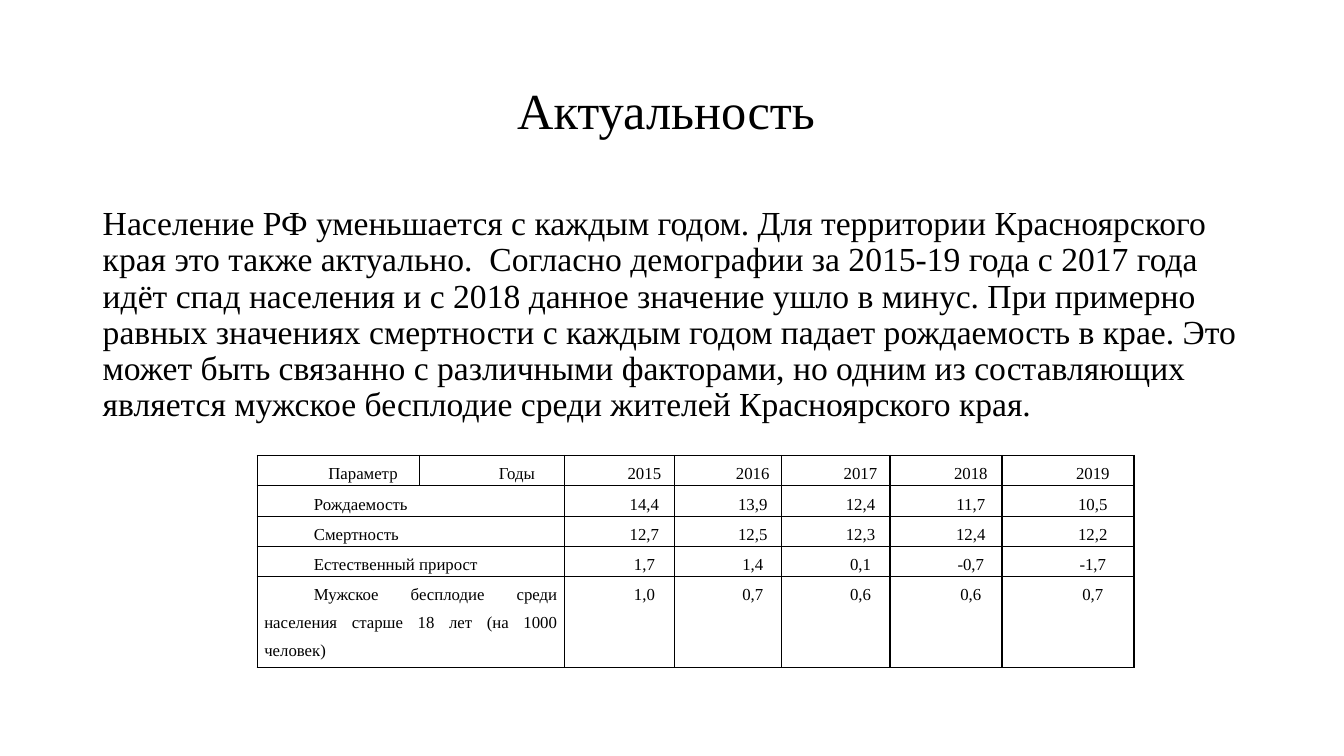
from dataclasses import dataclass

from lxml import etree
from pptx import Presentation
from pptx.dml.color import RGBColor
from pptx.enum.text import MSO_ANCHOR, PP_ALIGN
from pptx.oxml.ns import qn
from pptx.util import Cm, Pt

LEFT, CENTER, JUSTIFY = PP_ALIGN.LEFT, PP_ALIGN.CENTER, PP_ALIGN.JUSTIFY
TOP, MIDDLE = MSO_ANCHOR.TOP, MSO_ANCHOR.MIDDLE


@dataclass(frozen=True)
class Theme:
    font: str = "Times New Roman"
    ink: str = "000000"
    title_size: int = 36
    body_size: int = 24
    table_size: int = 12
    border_width: int = 1


THEME = Theme()

TITLE = "Актуальность "
BODY = (
    "Население РФ уменьшается с каждым годом. Для территории Красноярского края "
    "это также актуально.  Согласно демографии за 2015-19 года с 2017 года идёт "
    "спад населения и с 2018 данное значение ушло в минус. При примерно равных "
    "значениях смертности с каждым годом падает рождаемость в крае. Это может быть "
    "связанно с различными факторами, но одним из составляющих является мужское "
    "бесплодие среди жителей Красноярского края."
)

COLUMN_WIDTHS = [4.09, 3.66, 2.77, 2.69, 2.74, 2.82, 3.33]
ROW_HEIGHTS = [0.7, 0.7, 0.7, 0.7, 2.1]
HEADER = ["Параметр", "Годы", "2015", "2016", "2017", "2018", "2019"]
INDICATORS = [
    ("Рождаемость ", ["14,4", "13,9", "12,4", "11,7", "10,5"]),
    ("Смертность ", ["12,7", "12,5", "12,3", "12,4", "12,2"]),
    ("Естественный прирост", ["1,7", "1,4", "0,1", "-0,7", "-1,7"]),
    ("Мужское бесплодие среди населения старше 18 лет (на 1000 человек)",
     ["1,0", "0,7", "0,6", "0,6", "0,7"]),
]


def write_text(frame, text, *, size, align=LEFT, line_spacing=0.9,
               space_before=0, first_indent=0):
    para = frame.paragraphs[0]
    para.alignment = align
    para.line_spacing = line_spacing
    para.space_before = Pt(space_before)
    if first_indent:
        properties = para._p.get_or_add_pPr()
        properties.set("marL", "0")
        properties.set("indent", str(Cm(first_indent)))
    span = para.add_run()
    span.text = text
    span.font.name = THEME.font
    span.font.size = Pt(size)
    span.font.color.rgb = RGBColor.from_string(THEME.ink)


def add_text_box(page, text, left, top, width, height, *, anchor=TOP, **text_format):
    box = page.shapes.add_textbox(Cm(left), Cm(top), Cm(width), Cm(height))
    box.text_frame.word_wrap = True
    box.text_frame.vertical_anchor = anchor
    write_text(box.text_frame, text, **text_format)


def style_cell(cell):
    cell.margin_left = cell.margin_right = Cm(0.18)
    cell.margin_top = cell.margin_bottom = 0
    properties = cell._tc.get_or_add_tcPr()
    for side in ("a:lnL", "a:lnR", "a:lnT", "a:lnB"):
        line = etree.SubElement(properties, qn(side), w=str(Pt(THEME.border_width)))
        fill = etree.SubElement(line, qn("a:solidFill"))
        etree.SubElement(fill, qn("a:srgbClr"), val=THEME.ink)
    cell.fill.background()


def write_cell(cell, text, align=CENTER):
    write_text(cell.text_frame, text, size=THEME.table_size, align=align,
               line_spacing=1.5, first_indent=1.25)


def add_indicator_table(page, left, top):
    table = page.shapes.add_table(
        len(ROW_HEIGHTS), len(COLUMN_WIDTHS), Cm(left), Cm(top),
        Cm(sum(COLUMN_WIDTHS)), Cm(sum(ROW_HEIGHTS))).table
    table.first_row = table.horz_banding = False
    for column, width in zip(table.columns, COLUMN_WIDTHS):
        column.width = Cm(width)
    for row, height in zip(table.rows, ROW_HEIGHTS):
        row.height = Cm(height)
    for cell in table.iter_cells():
        style_cell(cell)

    # Header row
    for column, text in enumerate(HEADER):
        write_cell(table.cell(0, column), text)

    # Indicators: a name across two columns, then one value per year
    for row, (name, values) in enumerate(INDICATORS, start=1):
        table.cell(row, 0).merge(table.cell(row, 1))
        write_cell(table.cell(row, 0), name, align=JUSTIFY)
        for column, value in enumerate(values, start=2):
            write_cell(table.cell(row, column), value)


def main():
    deck = Presentation()
    deck.slide_width, deck.slide_height = Cm(33.87), Cm(19.05)
    page = deck.slides.add_slide(deck.slide_layouts[6])

    # Title and explanation
    add_text_box(page, TITLE, 2.34, 1.02, 29.21, 3.68, anchor=MIDDLE,
                 size=THEME.title_size, align=CENTER)
    add_text_box(page, BODY, 2.34, 5.08, 29.21, 12.09,
                 size=THEME.body_size, space_before=10)

    # Demographic figures by year
    add_indicator_table(page, 6.48, 11.48)

    deck.save("out.pptx")


if __name__ == "__main__":
    main()
